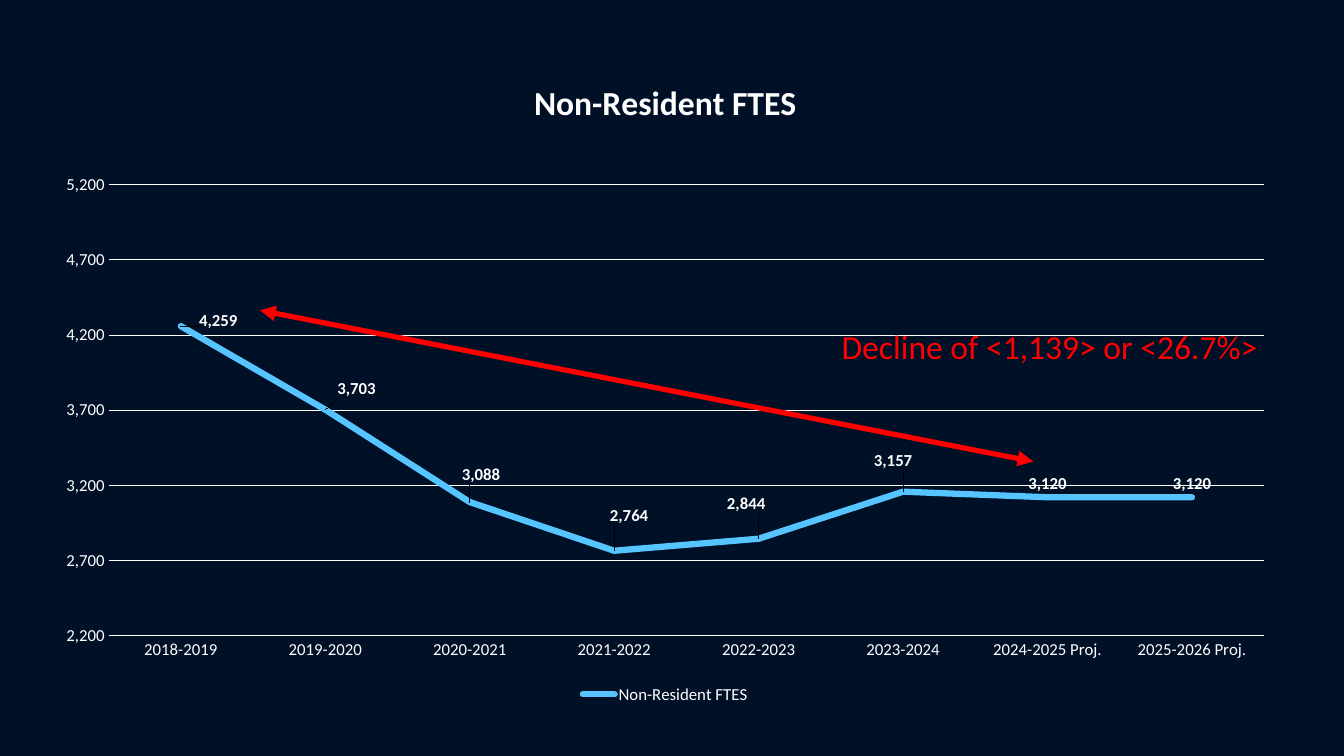
from dataclasses import dataclass

from lxml import etree
from pptx import Presentation, util as u
from pptx.chart import chart as charts, data as chart_data
from pptx.dml import color
from pptx.enum import chart as chart_enum, shapes, text
from pptx.oxml import ns

NAVY = color.RGBColor(0x00, 0x10, 0x27)
WHITE = color.RGBColor(0xFF, 0xFF, 0xFF)
SKY = color.RGBColor(0x56, 0xC5, 0xFF)
RED = color.RGBColor(0xFF, 0x00, 0x00)
FONT = "Calibri"
SERIES_NAME = "Non-Resident FTES"
NUMBER_FORMAT = "#,##0"


@dataclass(frozen=True)
class YearPoint:
    year: str
    ftes: int
    label_shift: tuple[float, float] | None = None


YEARS = [
    YearPoint("2018-2019", 4259, (3, 1.3)),
    YearPoint("2019-2020", 3703, (2.5, -1.1)),
    YearPoint("2020-2021", 3088, (0.9, -2.1)),
    YearPoint("2021-2022", 2764, (1.2, -3.2)),
    YearPoint("2022-2023", 2844, (-1, -3.2)),
    YearPoint("2023-2024", 3157, (-0.8, -2.6)),
    YearPoint("2024-2025 Proj.", 3120),
    YearPoint("2025-2026 Proj.", 3120),
]


def style_font(font, size: float, rgb: color.RGBColor, bold: bool = False) -> None:
    font.name = FONT
    font.size = u.Pt(size)
    font.bold = bold
    font.color.rgb = rgb


def set_layout(parent, index: int, **settings: str | float) -> None:
    for old in parent.findall(ns.qn("c:layout")):
        parent.remove(old)
    layout = etree.Element(ns.qn("c:layout"))
    manual = etree.SubElement(layout, ns.qn("c:manualLayout"))
    for name, value in settings.items():
        etree.SubElement(manual, ns.qn(f"c:{name}")).set("val", str(value))
    parent.insert(index, layout)


def style_axes(chart: charts.Chart) -> None:
    for axis in (chart.category_axis, chart.value_axis):
        axis.major_tick_mark = chart_enum.XL_TICK_MARK.NONE
        axis.minor_tick_mark = chart_enum.XL_TICK_MARK.NONE
        style_font(axis.tick_labels.font, 12, WHITE)
    values = chart.value_axis
    values.minimum_scale = 2200
    values.maximum_scale = 5500
    values.major_unit = 500
    values.tick_labels.number_format = NUMBER_FORMAT
    values.tick_labels.number_format_is_linked = False
    values.format.line.fill.background()
    values.has_major_gridlines = True
    for line in (chart.category_axis.format.line, values.major_gridlines.format.line):
        line.color.rgb = WHITE
        line.width = u.Pt(0.75)


def style_series(chart: charts.Chart) -> None:
    series = chart.plots[0].series[0]
    series.smooth = False
    series.marker.style = chart_enum.XL_MARKER_STYLE.NONE
    series.format.line.color.rgb = SKY
    series.format.line.width = u.Pt(4.5)
    chart.element.xpath(".//c:ser/c:spPr/a:ln")[0].set("cap", "rnd")

    labels = series.data_labels
    labels.show_value = True
    labels.number_format = NUMBER_FORMAT
    labels.number_format_is_linked = False
    labels.position = chart_enum.XL_LABEL_POSITION.ABOVE
    style_font(labels.font, 12, WHITE, bold=True)
    for index, point in enumerate(YEARS):
        if point.label_shift is None:
            continue
        label = series.points[index].data_label
        label.position = chart_enum.XL_LABEL_POSITION.ABOVE
        style_font(label.font, 12, WHITE, bold=True)
        element = chart.element.xpath(f".//c:dLbl[c:idx/@val='{index}']")[0]
        across, down = point.label_shift
        set_layout(element, 1, x=across / 100, y=down / 100)


def add_ftes_chart(slide) -> None:
    data = chart_data.CategoryChartData(number_format=NUMBER_FORMAT)
    data.categories = [point.year for point in YEARS]
    data.add_series(SERIES_NAME, [point.ftes for point in YEARS])
    chart = slide.shapes.add_chart(
        chart_enum.XL_CHART_TYPE.LINE,
        u.Cm(1.04), u.Cm(1.19), u.Cm(31.45), u.Cm(16.66), data,
    ).chart
    style_font(chart.font, 10, WHITE)
    chart.plots[0].vary_by_categories = False

    chart.has_title = True
    title = chart.chart_title
    title.text_frame.text = SERIES_NAME
    style_font(title.text_frame.paragraphs[0].font, 24, WHITE, bold=True)
    set_layout(chart.element.xpath(".//c:title")[0], 1,
               xMode="edge", yMode="edge", x=0.39, y=0.04)
    set_layout(chart.element.xpath(".//c:plotArea")[0], 0,
               layoutTarget="inner", xMode="edge", yMode="edge",
               x=0.054, y=0.14, w=0.926, h=0.75)

    chart.has_legend = True
    chart.legend.position = chart_enum.XL_LEGEND_POSITION.BOTTOM
    chart.legend.include_in_layout = False
    style_font(chart.legend.font, 12, WHITE)
    style_axes(chart)
    style_series(chart)


def add_decline_note(slide) -> None:
    box = slide.shapes.add_textbox(u.Cm(20.96), u.Cm(8.08), u.Cm(11.07), u.Cm(1.27))
    frame = box.text_frame
    frame.word_wrap = False
    frame.auto_size = text.MSO_AUTO_SIZE.SHAPE_TO_FIT_TEXT
    paragraph = frame.paragraphs[0]
    paragraph.text = "Decline of <1,139> or <26.7%>"
    style_font(paragraph.font, 24, RED)


def add_decline_arrow(slide) -> None:
    arrow = slide.shapes.add_connector(
        shapes.MSO_CONNECTOR.STRAIGHT,
        u.Cm(6.55), u.Cm(7.82), u.Cm(26.04), u.Cm(11.63),
    )
    arrow.line.color.rgb = RED
    arrow.line.width = u.Pt(3.75)
    properties = arrow.element.spPr
    outline = properties.find(ns.qn("a:ln"))
    for end in ("a:headEnd", "a:tailEnd"):
        etree.SubElement(outline, ns.qn(end)).set("type", "triangle")
    etree.SubElement(properties, ns.qn("a:effectLst"))


def main() -> None:
    presentation = Presentation()
    presentation.slide_width = u.Cm(33.87)
    presentation.slide_height = u.Cm(19.05)
    slide = presentation.slides.add_slide(presentation.slide_layouts[6])
    slide.background.fill.solid()
    slide.background.fill.fore_color.rgb = NAVY
    add_ftes_chart(slide)
    add_decline_note(slide)
    add_decline_arrow(slide)
    presentation.save("out.pptx")


if __name__ == "__main__":
    main()
